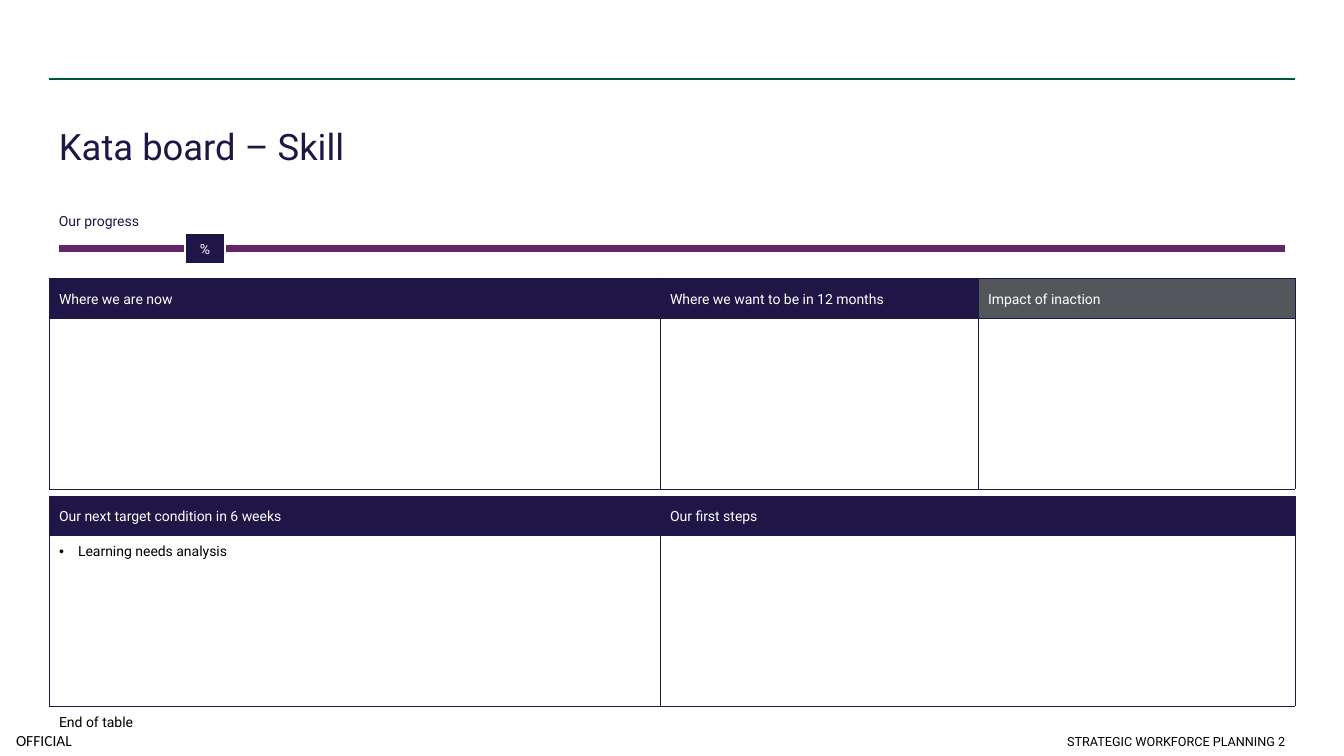
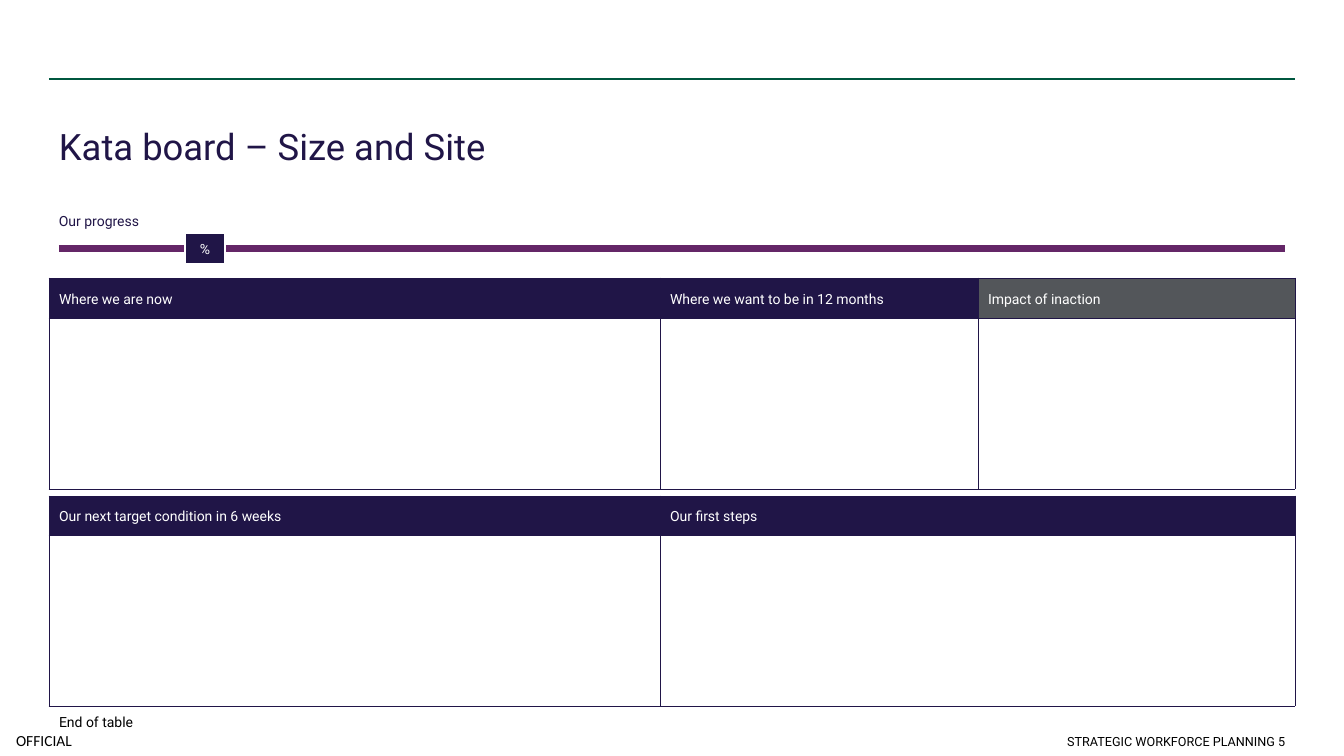
from dataclasses import dataclass

from lxml.etree import SubElement
from pptx import Presentation
from pptx.dml.color import RGBColor
from pptx.enum.shapes import MSO_CONNECTOR as CONN, MSO_SHAPE as SHAPE
from pptx.enum.text import MSO_ANCHOR as ANCHOR, PP_ALIGN as ALIGN
from pptx.oxml.ns import qn
from pptx.util import Emu, Pt

NAVY, GREEN, PURPLE, GREY = "201547", "00573F", "642667", "53565A"
WHITE, BLACK = "FFFFFF", "000000"
FONT = "Roboto"
LEFT, WIDTH, PAD = 49, 1246, 10
RIGHT = LEFT + WIDTH
INDENT = 19


@dataclass(frozen=True)
class Style:
    size: int
    color: str
    font: str = FONT
    align: ALIGN = ALIGN.LEFT
    anchor: ANCHOR = ANCHOR.TOP
    spacing: float = 1.0


@dataclass(frozen=True)
class Column:
    heading: str
    width: int
    fill: str = NAVY
    bullet: str = ""


@dataclass(frozen=True)
class Board:
    title: str
    page: int
    target: str = ""


TITLE = Style(26, NAVY, anchor=ANCHOR.MIDDLE, spacing=1.2)
LABEL = Style(10, NAVY)
MARKER = Style(10, WHITE, align=ALIGN.CENTER, anchor=ANCHOR.MIDDLE)
HEADING = Style(10, WHITE, anchor=ANCHOR.MIDDLE, spacing=1.2)
BODY = Style(10, BLACK, spacing=1.2)
MARKING = Style(11, BLACK, "Calibri", ALIGN.CENTER, ANCHOR.MIDDLE)
FOOTER = Style(9, BLACK, align=ALIGN.RIGHT, anchor=ANCHOR.BOTTOM)

BOARDS = [
    Board("Kata board – Skill", 2, "Learning needs analysis"),
    Board("Kata board – Size and Site", 5),
]


def px(n: int) -> Emu:
    return Emu(round(n * 914400 / 100.8))


def rgb(color: str) -> RGBColor:
    return RGBColor.from_string(color)


def format_text(p, style: Style) -> None:
    p.alignment = style.align
    p.line_spacing = style.spacing
    for r in p.runs:
        r.font.size = Pt(style.size)
        r.font.name = style.font
        r.font.color.rgb = rgb(style.color)
    if not p.runs:
        SubElement(p._p, qn("a:endParaRPr"), sz=str(style.size * 100))


def fill_frame(tf, text: str, style: Style, inset: bool = True) -> None:
    tf.word_wrap = True
    tf.vertical_anchor = style.anchor
    if not inset:
        tf.margin_left = tf.margin_right = tf.margin_top = tf.margin_bottom = 0
    tf.text = text
    format_text(tf.paragraphs[0], style)


def add_text(s, x: int, y: int, w: int, h: int, text: str, style: Style,
             inset: bool = True) -> None:
    sp = s.shapes.add_textbox(px(x), px(y), px(w), px(h))
    fill_frame(sp.text_frame, text, style, inset)


def add_rule(s, x1: int, x2: int, y: int, color: str, weight: int) -> None:
    cx = s.shapes.add_connector(CONN.STRAIGHT, px(x1), px(y), px(x2), px(y))
    cx.line.color.rgb = rgb(color)
    cx.line.width = Pt(weight)
    SubElement(cx._element.spPr, qn("a:effectLst"))


def set_borders(cell, sides: str) -> None:
    tc_pr = cell._tc.get_or_add_tcPr()
    for side in "LRTB":
        ln = SubElement(tc_pr, qn(f"a:ln{side}"), w=str(Pt(0.5)))
        if side in sides:
            fill = SubElement(ln, qn("a:solidFill"))
            SubElement(fill, qn("a:srgbClr"), val=NAVY)
        else:
            SubElement(ln, qn("a:noFill"))


def set_cell(cell, text: str, style: Style, fill: str = "",
             sides: str = "LRTB") -> None:
    set_borders(cell, sides)
    if fill:
        cell.fill.solid()
        cell.fill.fore_color.rgb = rgb(fill)
    else:
        cell.fill.background()
    cell.vertical_anchor = style.anchor
    p = cell.text_frame.paragraphs[0]
    p.text = text
    format_text(p, style)


def add_bullet(p) -> None:
    p_pr = p._p.get_or_add_pPr()
    p_pr.set("marL", str(px(INDENT)))
    p_pr.set("indent", str(-px(INDENT)))
    SubElement(p_pr, qn("a:buFont"), typeface="Arial")
    SubElement(p_pr, qn("a:buChar"), char="•")


def add_grid(s, y: int, heights: list[int], columns: list[Column],
             end_fill: str = "") -> None:
    tbl = s.shapes.add_table(len(heights), len(columns), px(LEFT), px(y),
                             px(WIDTH), px(sum(heights))).table
    tbl.first_row = tbl.horz_banding = False
    for row, height in zip(tbl.rows, heights):
        row.height = px(height)
    for i, col in enumerate(columns):
        tbl.columns[i].width = px(col.width)
        set_cell(tbl.cell(0, i), col.heading, HEADING, col.fill)
        body = tbl.cell(1, i)
        set_cell(body, col.bullet, BODY, WHITE)
        if col.bullet:
            add_bullet(body.text_frame.paragraphs[0])
        set_cell(tbl.cell(2, i), "" if i else "End of table", BODY, end_fill, "T")


def add_frame(s, board: Board) -> None:
    add_rule(s, LEFT, RIGHT, 79, GREEN, 1)
    add_text(s, 0, 725, 88, 31, "OFFICIAL", MARKING, inset=False)
    add_text(s, LEFT, 90, WIDTH, 103, board.title, TITLE)
    add_text(s, 689, 715, RIGHT - 689, 39,
             f"STRATEGIC WORKFORCE PLANNING {board.page}", FOOTER)


def add_progress(s) -> None:
    add_text(s, LEFT, 208, WIDTH, 92, "Our progress", LABEL)
    add_rule(s, LEFT + PAD, RIGHT - PAD, 249, PURPLE, 5)
    sp = s.shapes.add_shape(SHAPE.RECTANGLE, px(185), px(233), px(40), px(31))
    sp.shadow.inherit = False
    sp.fill.solid()
    sp.fill.fore_color.rgb = rgb(NAVY)
    sp.line.color.rgb = rgb(WHITE)
    sp.line.width = Pt(1)
    fill_frame(sp.text_frame, "%", MARKER, inset=False)


def add_board(prs, board: Board) -> None:
    s = prs.slides.add_slide(prs.slide_layouts[6])
    add_frame(s, board)
    add_progress(s)
    add_grid(s, 278, [40, 171, 28], [
        Column("Where we are now", 611),
        Column("Where we want to be in 12 months", 318),
        Column("Impact of inaction", 317, GREY),
    ], WHITE)
    add_grid(s, 496, [39, 171, 31], [
        Column("Our next target condition in 6 weeks", 611, bullet=board.target),
        Column("Our first steps", 635),
    ])


def main() -> None:
    prs = Presentation()
    prs.slide_width, prs.slide_height = px(1344), px(756)
    for board in BOARDS:
        add_board(prs, board)
    prs.save("out.pptx")


if __name__ == "__main__":
    main()
